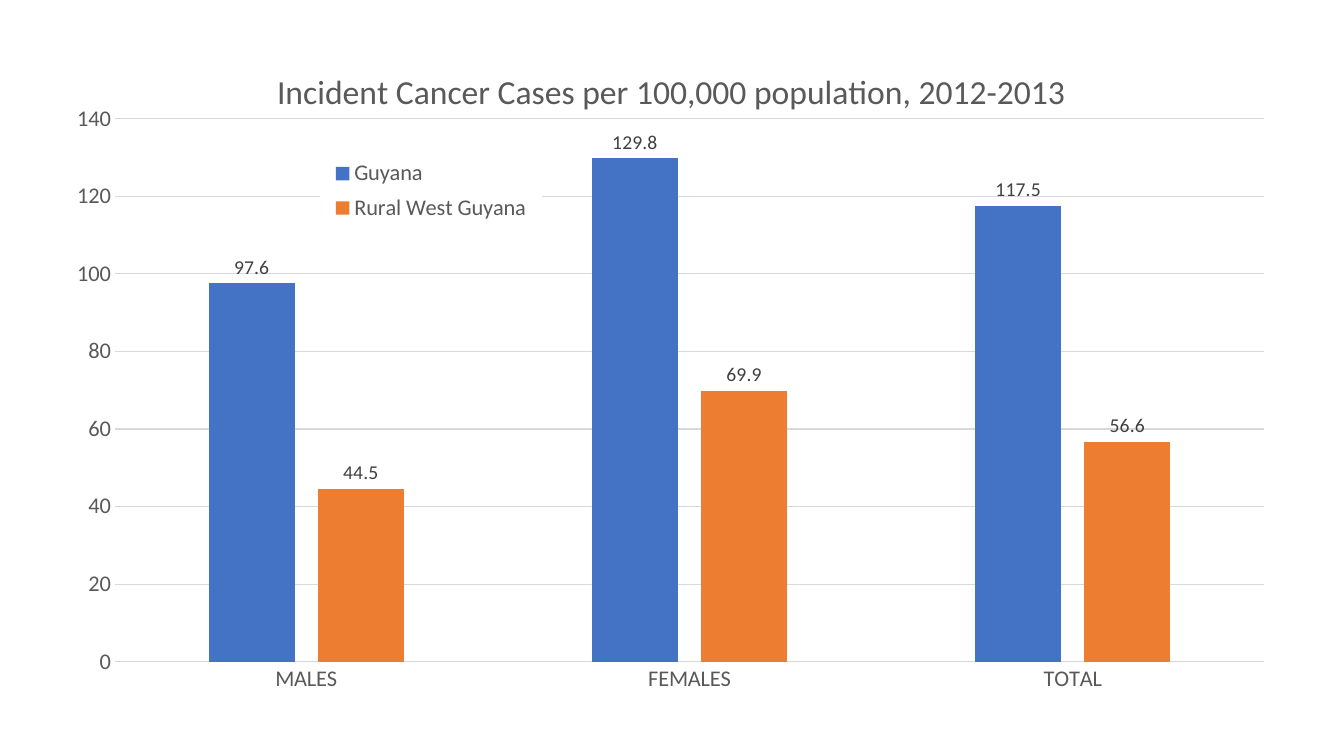
from lxml.etree import SubElement
from pptx import Presentation
from pptx.chart.data import CategoryChartData
from pptx.dml.color import RGBColor
from pptx.enum.chart import XL_CHART_TYPE, XL_LABEL_POSITION, XL_LEGEND_POSITION, XL_TICK_MARK
from pptx.oxml import parse_xml
from pptx.oxml.ns import nsdecls, qn
from pptx.util import Inches, Pt

TITLE = "Incident Cancer Cases per 100,000 population, 2012-2013"
GROUPS = ["MALES", "FEMALES", "TOTAL"]
RATES = {
    "Guyana": [97.6, 129.8, 117.5],
    "Rural West Guyana": [44.5, 69.9, 56.6],
}
THEME = {
    "font": "Calibri",
    "title": (24, "595959"),
    "axis": (16, "595959"),
    "label": (14, "404040"),
    "grid": "D9D9D9",
    "grid_width": 0.75,
    "legend_fill": "FFFFFF",
    "regions": ["4472C4", "ED7D31"],
}
CHART_BOX = (0.49, 0.35, 12.21, 6.86)
PLOT_AREA = {"x": 0.05, "y": 0.12, "w": 0.93, "h": 0.79}
PLOT_AREA = {"x": 0.053, "y": 0.121, "w": 0.934, "h": 0.785}
TITLE_AREA = {"x": 0.18, "y": 0.04}
LEGEND_AREA = {"x": 0.22, "y": 0.17, "w": 0.18, "h": 0.11}
BARS = {"gap_width": 219, "overlap": -27, "vary_by_categories": False}
RATE_AXIS = {
    "minimum_scale": 0,
    "maximum_scale": 140,
    "major_unit": 20,
    "major_tick_mark": XL_TICK_MARK.NONE,
    "has_major_gridlines": True,
}
GROUP_AXIS = {"major_tick_mark": XL_TICK_MARK.NONE, "has_major_gridlines": False}
LEGEND = {"position": XL_LEGEND_POSITION.BOTTOM, "include_in_layout": False}
LABELS = {
    "show_value": True,
    "position": XL_LABEL_POSITION.OUTSIDE_END,
    "number_format": "0.0",
    "number_format_is_linked": False,
}
TICK_LABELS = {"number_format": "0", "number_format_is_linked": False}


def apply(target, settings):
    for name, value in settings.items():
        setattr(target, name, value)


def style_font(font, role):
    size, color = THEME[role]
    apply(font, {"name": THEME["font"], "size": Pt(size), "bold": False})
    font.color.rgb = RGBColor.from_string(color)


def style_line(line):
    line.color.rgb = RGBColor.from_string(THEME["grid"])
    line.width = Pt(THEME["grid_width"])


def place(element, index, area, target=None):
    for old in element.findall(qn("c:layout")):
        element.remove(old)
    layout = parse_xml(f"<c:layout {nsdecls('c')}/>")
    manual = SubElement(layout, qn("c:manualLayout"))
    if target:
        SubElement(manual, qn("c:layoutTarget"), val=target)
    for mode in ("xMode", "yMode"):
        SubElement(manual, qn(f"c:{mode}"), val="edge")
    for side, share in area.items():
        SubElement(manual, qn(f"c:{side}"), val=str(share))
    element.insert(index, layout)


deck = Presentation()
apply(deck, {"slide_width": Inches(13.33), "slide_height": Inches(7.5)})
slide = deck.slides.add_slide(deck.slide_layouts[6])

rates = CategoryChartData(number_format="0.0")
rates.categories = GROUPS
for region, values in RATES.items():
    rates.add_series(region, values)
chart = slide.shapes.add_chart(
    XL_CHART_TYPE.COLUMN_CLUSTERED, *map(Inches, CHART_BOX), rates
).chart
style_font(chart.font, "axis")

heading = chart.chart_title
heading.text_frame.text = TITLE
style_font(heading.text_frame.paragraphs[0].runs[0].font, "title")
place(heading.element if hasattr(heading, "element") else heading._element, 1, TITLE_AREA)

bars = chart.plots[0]
apply(bars, BARS)
for region, color in zip(bars.series, THEME["regions"]):
    region.format.fill.solid()
    region.format.fill.fore_color.rgb = RGBColor.from_string(color)
    apply(region.data_labels, LABELS)
    style_font(region.data_labels.font, "label")

for axis, settings in ((chart.value_axis, RATE_AXIS), (chart.category_axis, GROUP_AXIS)):
    apply(axis, settings)
    style_font(axis.tick_labels.font, "axis")
apply(chart.value_axis.tick_labels, TICK_LABELS)
chart.value_axis.format.line.fill.background()
style_line(chart.value_axis.major_gridlines.format.line)
style_line(chart.category_axis.format.line)

chart.has_legend = True
apply(chart.legend, LEGEND)
style_font(chart.legend.font, "axis")
key = chart.legend._element
place(key, 1, LEGEND_AREA)
key.find(qn("c:txPr")).addprevious(parse_xml(
    f"<c:spPr {nsdecls('c', 'a')}><a:solidFill>"
    f"<a:srgbClr val=\"{THEME['legend_fill']}\"/></a:solidFill></c:spPr>"
))
place(key.getparent().find(qn("c:plotArea")), 0, PLOT_AREA, "inner")

deck.save("out.pptx")
